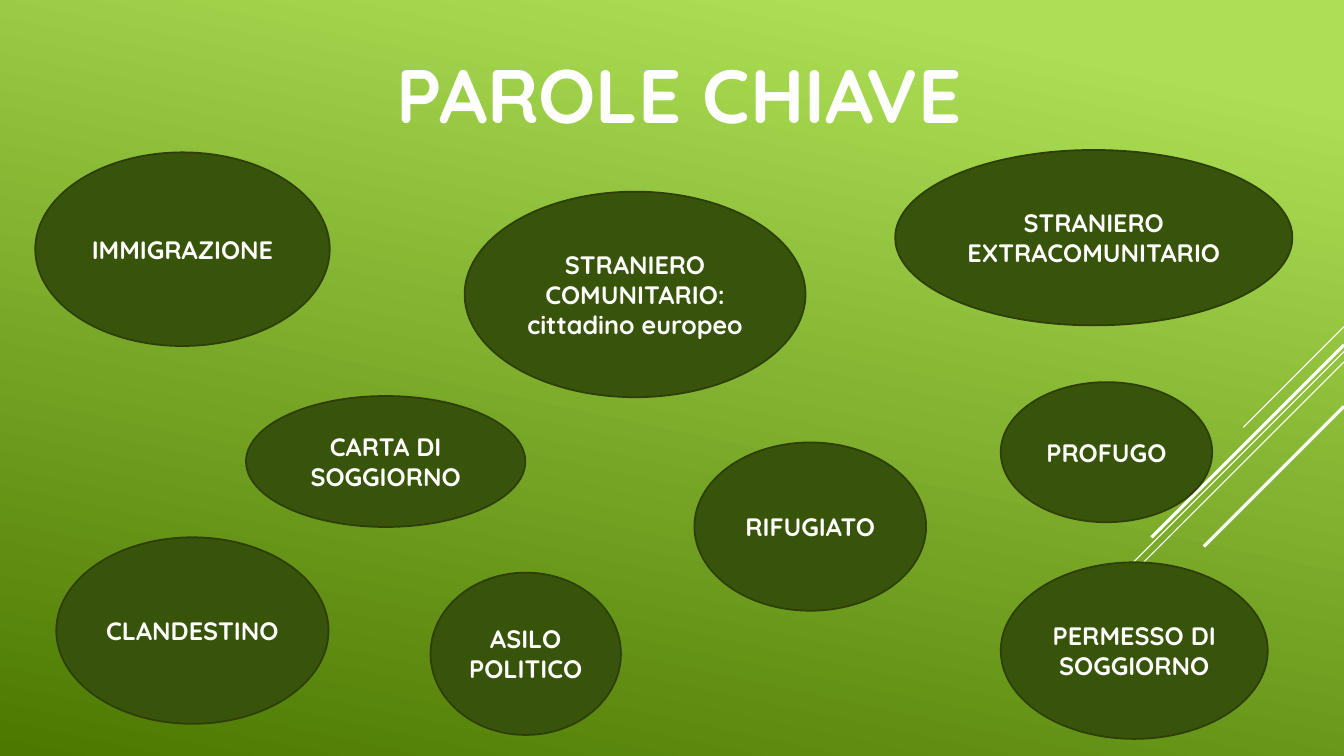
import dataclasses

import lxml.etree
import pptx
import pptx.dml.color
import pptx.enum.shapes
import pptx.enum.text
import pptx.oxml.ns
import pptx.util

Cm = pptx.util.Cm
Pt = pptx.util.Pt


@dataclasses.dataclass(frozen=True)
class Theme:
    font: str = "Quicksand"
    white: str = "FFFFFF"
    light: str = "ACDF55"
    dark: str = "4C7800"
    bubble: str = "38540A"
    outline: str = "2E3E07"
    title_size: float = 54
    label_size: float = 18
    outline_width: float = 1.25
    thin: float = 0.75
    thick: float = 2.25


THEME = Theme()
WIDTH, HEIGHT = 33.87, 19.05

RAYS = [
    (8.23, 2.54, THEME.thin),
    (8.86, 8.28, THEME.thin),
    (9.12, 5.27, THEME.thin),
    (8.69, 4.85, THEME.thick),
    (10.24, 3.53, THEME.thick),
]

KEYWORDS = [
    ("IMMIGRAZIONE", 0.89, 3.84, 7.42, 4.88),
    ("STRANIERO COMUNITARIO: cittadino europeo", 11.71, 4.83, 8.59, 5.18),
    ("STRANIERO EXTRACOMUNITARIO", 22.56, 3.78, 10.01, 4.42),
    ("CARTA DI SOGGIORNO", 6.2, 9.98, 7.04, 3.3),
    ("ASILO POLITICO", 10.85, 14.43, 4.8, 4.09),
    ("PROFUGO", 25.22, 9.63, 5.33, 3.53),
    ("CLANDESTINO", 1.42, 13.54, 6.86, 4.7),
    ("RIFUGIATO", 17.5, 11.15, 5.84, 4.24),
    ("PERMESSO DI SOGGIORNO", 25.22, 14.17, 6.73, 4.45),
]


def rgb(code):
    return pptx.dml.color.RGBColor.from_string(code)


def write_text(box, text, *, size, color, font, bold=True):
    frame = box.text_frame
    frame.word_wrap = True
    frame.vertical_anchor = pptx.enum.text.MSO_ANCHOR.MIDDLE
    para = frame.paragraphs[0]
    para.alignment = pptx.enum.text.PP_ALIGN.CENTER
    span = para.add_run()
    span.text = text
    span.font.name = font
    span.font.size = Pt(size)
    span.font.bold = bold
    span.font.color.rgb = rgb(color)


class PageBuilder:
    def __init__(self, page, theme):
        self.page = page
        self.theme = theme

    def background(self, angle):
        fill = self.page.background.fill
        fill.gradient()
        fill.gradient_angle = angle
        stops = [(0.1, self.theme.light), (1, self.theme.dark)]
        for stop, (position, color) in zip(fill.gradient_stops, stops):
            stop.position = position
            stop.color.rgb = rgb(color)

    def ray(self, top, reach, width):
        line = self.page.shapes.add_connector(
            pptx.enum.shapes.MSO_CONNECTOR.STRAIGHT,
            Cm(WIDTH), Cm(top), Cm(WIDTH - reach), Cm(top + reach))
        line.line.color.rgb = rgb(self.theme.white)
        line.line.width = Pt(width)
        lxml.etree.SubElement(line._element.spPr, pptx.oxml.ns.qn("a:effectLst"))

    def title(self, text, left, top, width, height):
        box = self.page.shapes.add_textbox(Cm(left), Cm(top), Cm(width), Cm(height))
        write_text(box, text, size=self.theme.title_size,
                   color=self.theme.white, font=self.theme.font)

    def bubble(self, text, left, top, width, height):
        box = self.page.shapes.add_shape(
            pptx.enum.shapes.MSO_SHAPE.OVAL,
            Cm(left), Cm(top), Cm(width), Cm(height))
        box.shadow.inherit = False
        box.fill.solid()
        box.fill.fore_color.rgb = rgb(self.theme.bubble)
        box.line.color.rgb = rgb(self.theme.outline)
        box.line.width = Pt(self.theme.outline_width)
        write_text(box, text, size=self.theme.label_size,
                   color=self.theme.white, font=self.theme.font)


def main():
    deck = pptx.Presentation()
    deck.slide_width, deck.slide_height = Cm(WIDTH), Cm(HEIGHT)
    builder = PageBuilder(deck.slides.add_slide(deck.slide_layouts[6]), THEME)
    builder.background(angle=258)
    for ray in RAYS:
        builder.ray(*ray)
    builder.title("PAROLE CHIAVE", 5.26, 0.25, 23.7, 4.19)
    for keyword in KEYWORDS:
        builder.bubble(*keyword)
    deck.save("out.pptx")


if __name__ == "__main__":
    main()
